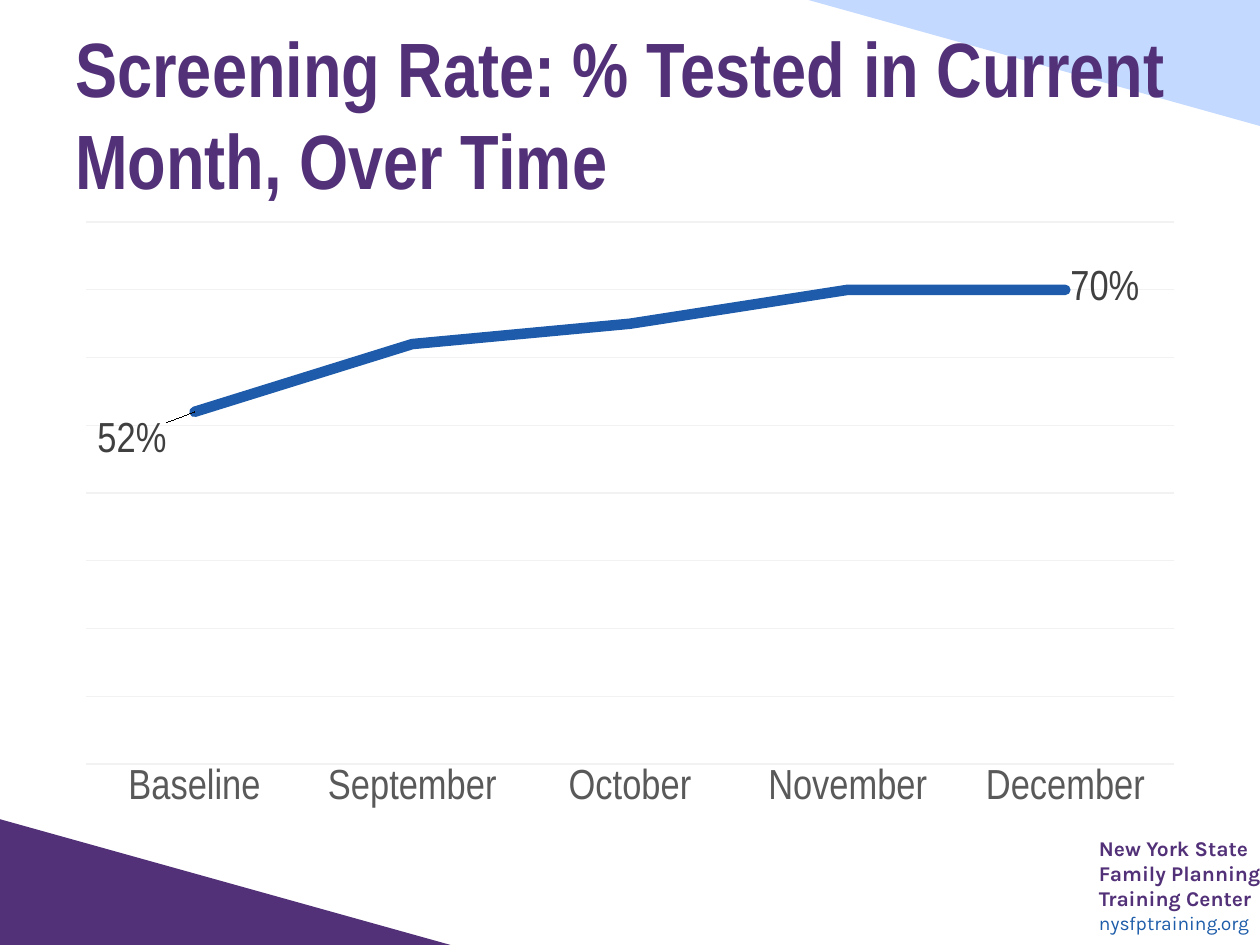
from lxml.etree import SubElement
from pptx import Presentation
from pptx.chart.data import CategoryChartData
from pptx.dml.color import RGBColor
from pptx.enum.chart import XL_CHART_TYPE, XL_LABEL_POSITION, XL_TICK_MARK
from pptx.enum.shapes import MSO_SHAPE
from pptx.enum.text import MSO_ANCHOR
from pptx.oxml.ns import qn
from pptx.util import Pt

COLORS = {
    "purple": "523178",
    "pale": "C3D9FF",
    "link": "1D5CA9",
    "line": "1E5BAA",
    "grid": "F2F2F2",
    "axis": "595959",
    "label": "404040",
    "black": "000000",
    "white": "FFFFFF",
}
NARROW = "Arial Narrow"
RATES = {
    "Baseline": 0.52,
    "September": 0.62,
    "October": 0.65,
    "November": 0.7,
    "December": 0.7,
}


def color(name):
    return RGBColor.from_string(COLORS[name])


def style(font, face, size, tint, bold=False):
    font.name = face
    font.size = Pt(size)
    font.bold = bold
    font.color.rgb = color(tint)


def add_wedge(slide, left, top, tint, turn=0):
    wedge = slide.shapes.add_shape(
        MSO_SHAPE.RIGHT_TRIANGLE, Pt(left), Pt(top), Pt(258), Pt(72))
    wedge.rotation = turn
    wedge.shadow.inherit = False
    wedge.fill.solid()
    wedge.fill.fore_color.rgb = color(tint)
    wedge.line.fill.background()


def add_text(slide, box, lines):
    frame = slide.shapes.add_textbox(*map(Pt, box)).text_frame
    frame.word_wrap = True
    for i, (text, *look) in enumerate(lines):
        para = frame.add_paragraph() if i else frame.paragraphs[0]
        para.text = text
        style(para.font, *look)
    return frame


def set_place(layout, **parts):
    manual = SubElement(layout, qn("c:manualLayout"))
    for tag, value in parts.items():
        SubElement(manual, qn(f"c:{tag}")).set("val", str(value))


def add_label(series, index):
    label = series.points[index].data_label
    style(label.font, NARROW, 24, "label")
    label.position = XL_LABEL_POSITION.RIGHT


def add_trend(slide):
    data = CategoryChartData(number_format="0%")
    data.categories = list(RATES)
    data.add_series("Series 1", list(RATES.values()))
    chart = slide.shapes.add_chart(
        XL_CHART_TYPE.LINE, Pt(36), Pt(120), Pt(648), Pt(348), data).chart
    chart.has_legend = False
    chart.has_title = False
    style(chart.font, NARROW, 24, "black")

    months = chart.category_axis
    months.major_tick_mark = XL_TICK_MARK.NONE
    months.format.line.fill.background()
    style(months.tick_labels.font, NARROW, 24, "axis")

    scale = chart.value_axis
    scale.minimum_scale = 0
    scale.maximum_scale = 0.8
    scale.major_unit = 0.1
    scale.visible = False
    scale.tick_labels.number_format = "0%"
    scale.tick_labels.number_format_is_linked = False
    grid = scale.major_gridlines.format.line
    grid.color.rgb = color("grid")
    grid.width = Pt(0.75)

    chart.plots[0].vary_by_categories = False
    series = chart.plots[0].series[0]
    series.smooth = False
    series.format.line.color.rgb = color("line")
    series.format.line.width = Pt(6)
    series.data_labels.show_value = False
    add_label(series, 0)
    add_label(series, len(RATES) - 1)

    root = chart.element
    root.xpath(".//c:ser/c:spPr/a:ln")[0].set("cap", "rnd")
    first = root.xpath(".//c:dLbl/c:idx[@val='0']")[0]
    layout = first.makeelement(qn("c:layout"))
    first.addnext(layout)
    set_place(layout, x=-0.09, y=0.05)

    area = root.xpath(".//c:plotArea")[0]
    for old in area.findall(qn("c:layout")):
        area.remove(old)
    layout = area.makeelement(qn("c:layout"))
    area.insert(0, layout)
    set_place(layout, layoutTarget="inner", xMode="edge", yMode="edge",
              x=0.02, y=0.02, w=0.96, h=0.89)


def main():
    deck = Presentation()
    deck.slide_width, deck.slide_height = Pt(720), Pt(540)
    slide = deck.slides.add_slide(deck.slide_layouts[6])
    slide.background.fill.solid()
    slide.background.fill.fore_color.rgb = color("white")

    add_wedge(slide, -0.5, 468, "purple")
    names = ["New York State", "Family Planning", "Training Center"]
    lines = [(name, "Karla", 12, "purple", True) for name in names]
    lines.append(("nysfptraining.org", "Karla", 11, "link"))
    brand = add_text(slide, (628, 477.5, 108.5, 58.5), lines)
    brand.margin_left = brand.margin_right = 0
    brand.margin_top = brand.margin_bottom = 0
    add_wedge(slide, 462, 0, "pale", 180)

    title = add_text(slide, (36, 21.5, 648, 86), [
        ("Screening Rate: % Tested in Current Month, Over Time",
         NARROW, 44, "purple", True)])
    title.vertical_anchor = MSO_ANCHOR.MIDDLE
    add_trend(slide)
    deck.save("out.pptx")


if __name__ == "__main__":
    main()
